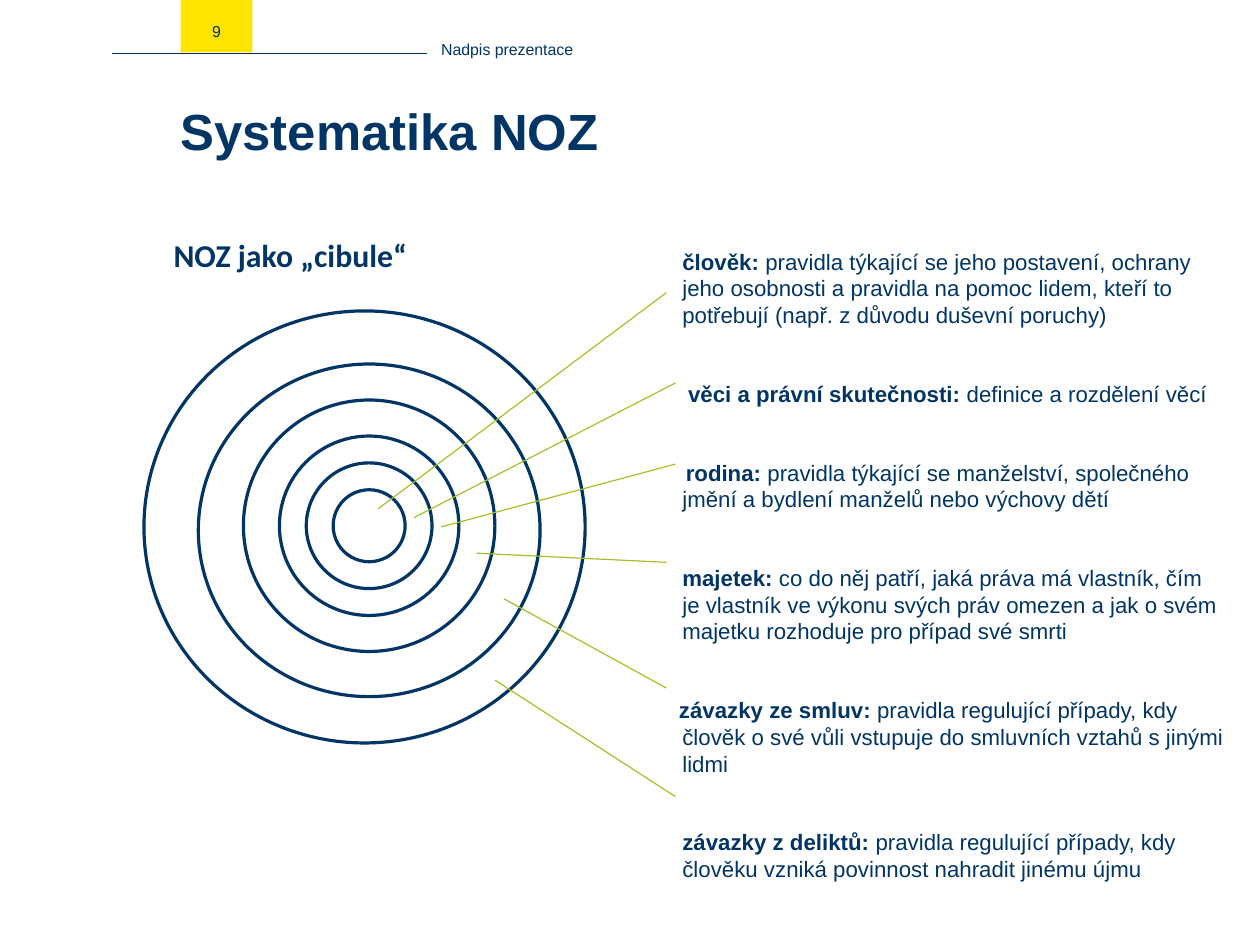
from typing import NamedTuple

from lxml import etree
from pptx import Presentation
from pptx.dml.color import RGBColor
from pptx.enum.shapes import MSO_CONNECTOR, MSO_SHAPE
from pptx.enum.text import MSO_ANCHOR, MSO_AUTO_SIZE, PP_ALIGN
from pptx.oxml.ns import qn
from pptx.util import Cm, Inches, Pt

NAVY = RGBColor(0x00, 0x35, 0x65)
YELLOW = RGBColor(0xFF, 0xE4, 0x00)
GREEN = RGBColor(0xA4, 0xBF, 0x25)


class Ring(NamedTuple):
    center_x: float
    center_y: float
    width: float
    height: float


class Line(NamedTuple):
    x1: float
    y1: float
    x2: float
    y2: float


class Layer(NamedTuple):
    term: str
    description: str
    first_indent: float  # relative to the left margin, in inches


RINGS = [
    Ring(3.19, 4.61, 3.86, 3.78),
    Ring(3.23, 4.64, 2.99, 2.91),
    Ring(3.23, 4.6, 2.2, 2.2),
    Ring(3.23, 4.6, 1.57, 1.57),
    Ring(3.23, 4.6, 1.1, 1.1),
    Ring(3.23, 4.6, 0.63, 0.63),
]

LEADERS = [
    Line(3.31, 4.45, 5.83, 2.56),
    Line(3.62, 4.53, 5.91, 3.35),
    Line(3.86, 4.61, 5.91, 4.06),
    Line(4.17, 4.84, 5.83, 4.92),
    Line(4.41, 5.24, 5.83, 6.02),
    Line(4.33, 5.95, 5.91, 6.97),
]

LAYERS = [
    Layer("člověk: ", "pravidla týkající se jeho postavení, ochrany jeho osobnosti "
          "a pravidla na pomoc lidem, kteří to potřebují (např. z důvodu duševní poruchy)", 0),
    Layer("věci a právní skutečnosti:", " definice a rozdělení věcí", 0.05),
    Layer("rodina:", " pravidla týkající se manželství, společného jmění "
          "a bydlení manželů nebo výchovy dětí", 0.03),
    Layer("majetek: ", "co do něj patří, jaká práva má vlastník, čím je vlastník ve výkonu "
          "svých práv omezen a jak o svém majetku rozhoduje pro případ své smrti", 0),
    Layer("závazky ze smluv: ", "pravidla regulující případy, kdy člověk o své vůli "
          "vstupuje do smluvních vztahů s jinými lidmi", -0.03),
    Layer("závazky z deliktů: ", "pravidla regulující případy, kdy člověku vzniká "
          "povinnost nahradit jinému újmu", 0),
]


def add_run(paragraph, text: str, size: float, bold: bool = False, font: str = "Arial") -> None:
    run = paragraph.add_run()
    run.text = text
    run.font.name = font
    run.font.size = Pt(size)
    run.font.bold = bold
    run.font.color.rgb = NAVY


def set_frame(shape, anchor, left: float = 0, top: float = 0):
    frame = shape.text_frame
    frame.word_wrap = True
    frame.auto_size = MSO_AUTO_SIZE.NONE
    frame.vertical_anchor = anchor
    frame.margin_left = frame.margin_right = Inches(left)
    frame.margin_top = Inches(top)
    frame.margin_bottom = 0
    return frame


def add_text_box(slide, left: float, top: float, width: float, height: float):
    return slide.shapes.add_textbox(Inches(left), Inches(top), Inches(width), Inches(height))


def add_line(slide, line: Line, color: RGBColor, width: float) -> None:
    connector = slide.shapes.add_connector(
        MSO_CONNECTOR.STRAIGHT, *(Inches(value) for value in line))
    connector.line.color.rgb = color
    connector.line.width = Pt(width)
    etree.SubElement(connector._element.spPr, qn("a:effectLst"))


def add_ring(slide, ring: Ring) -> None:
    shape = slide.shapes.add_shape(
        MSO_SHAPE.OVAL,
        Inches(ring.center_x - ring.width / 2), Inches(ring.center_y - ring.height / 2),
        Inches(ring.width), Inches(ring.height))
    shape.shadow.inherit = False
    shape.fill.background()
    shape.line.color.rgb = NAVY
    shape.line.width = Pt(2)


def add_header(slide) -> None:
    add_line(slide, Line(0.98, 0.47, 3.74, 0.47), NAVY, 1)
    caption = set_frame(add_text_box(slide, 3.86, 0.07, 6.61, 0.44), MSO_ANCHOR.BOTTOM)
    add_run(caption.paragraphs[0], "Nadpis prezentace", 10)

    badge = slide.shapes.add_shape(
        MSO_SHAPE.RECTANGLE, Inches(1.58), 0, Inches(0.63), Inches(0.46))
    badge.shadow.inherit = False
    badge.fill.solid()
    badge.fill.fore_color.rgb = YELLOW
    badge.line.fill.background()
    number = set_frame(badge, MSO_ANCHOR.MIDDLE, top=0.08).paragraphs[0]
    number.alignment = PP_ALIGN.CENTER
    add_run(number, "9", 10)


def add_title(slide) -> None:
    title = slide.shapes.title
    title.left, title.top = Inches(1.58), Inches(0.67)
    title.width, title.height = Inches(8.9), Inches(0.94)
    paragraph = set_frame(title, MSO_ANCHOR.MIDDLE).paragraphs[0]
    paragraph.alignment = PP_ALIGN.LEFT
    add_run(paragraph, "Systematika NOZ", 32, bold=True)


def add_descriptions(slide) -> None:
    frame = set_frame(add_text_box(slide, 5.67, 2.17, 5.04, 5.28), MSO_ANCHOR.TOP)
    for index, layer in enumerate(LAYERS):
        paragraph = frame.add_paragraph() if index else frame.paragraphs[0]
        properties = paragraph._p.get_or_add_pPr()
        properties.set("marL", str(Inches(0.3)))
        properties.set("indent", str(Inches(layer.first_indent)))
        paragraph.line_spacing = 1.0
        paragraph.space_before = Pt(32.8 if index else 0)
        add_run(paragraph, layer.term, 14, bold=True)
        add_run(paragraph, layer.description, 14)


def main() -> None:
    presentation = Presentation()
    presentation.slide_width = Cm(28)
    presentation.slide_height = Cm(21)
    slide = presentation.slides.add_slide(presentation.slide_layouts[5])

    add_header(slide)
    add_title(slide)
    add_descriptions(slide)

    # Onion diagram with its heading
    heading = set_frame(add_text_box(slide, 1.42, 2.01, 4.09, 0.44), MSO_ANCHOR.TOP, 0.1, 0.05)
    add_run(heading.paragraphs[0], "NOZ jako „cibule“", 20, bold=True, font="Calibri")
    for ring in RINGS:
        add_ring(slide, ring)
    for leader in LEADERS:
        add_line(slide, leader, GREEN, 0.75)

    presentation.save("out.pptx")


if __name__ == "__main__":
    main()
